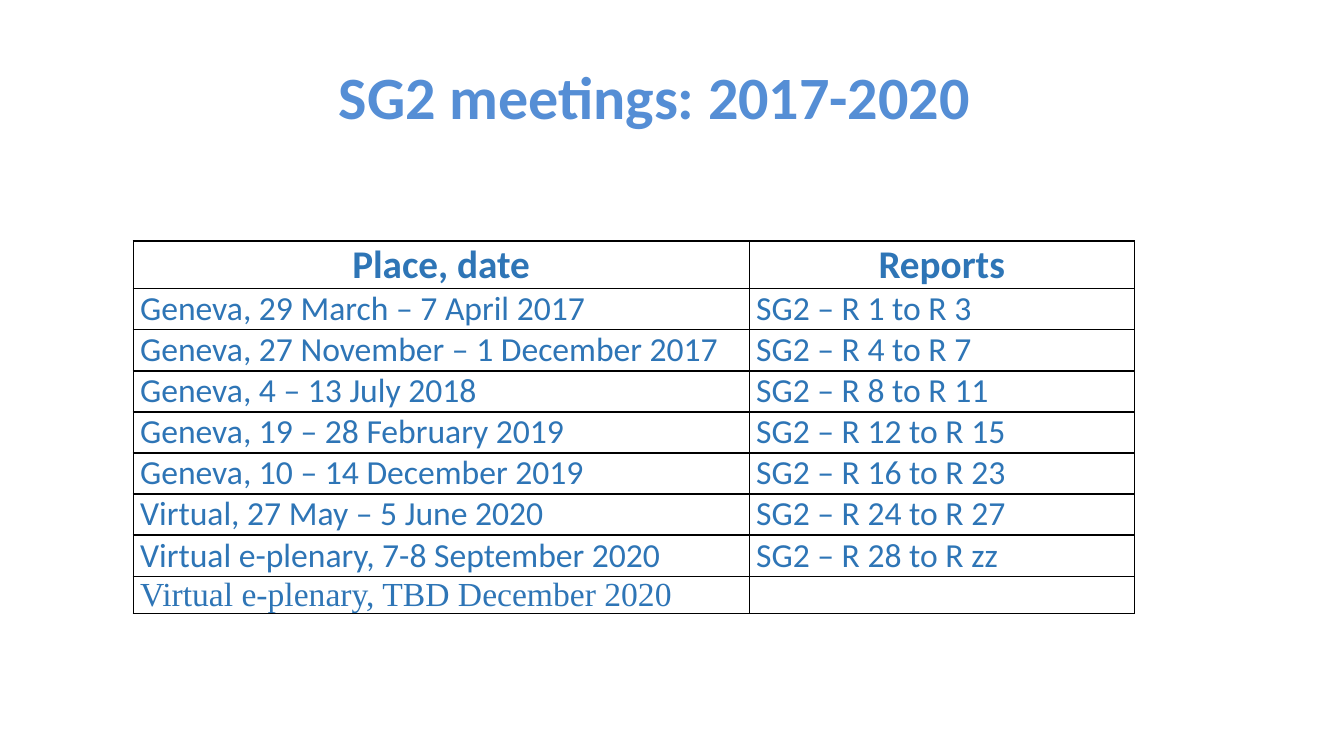
from dataclasses import dataclass

from lxml.etree import SubElement
from pptx import Presentation
from pptx.dml.color import RGBColor
from pptx.enum.text import MSO_ANCHOR as Anchor, MSO_AUTO_SIZE as AutoSize, PP_ALIGN as Align
from pptx.oxml.ns import qn
from pptx.slide import Slide
from pptx.table import _Cell as Cell
from pptx.text.text import _Paragraph as Paragraph
from pptx.util import Inches, Pt

TITLE_BLUE = RGBColor(0x55, 0x8E, 0xD5)
TABLE_BLUE = RGBColor(0x2E, 0x75, 0xB6)
BLACK = RGBColor(0, 0, 0)


@dataclass(frozen=True)
class TextStyle:
    size: float
    color: RGBColor
    bold: bool = False
    font: str = "Calibri"
    align: Align = Align.LEFT
    after: float = 0


@dataclass(frozen=True)
class Meeting:
    place_date: str
    reports: str
    style: TextStyle
    height: float = 0.4


TITLE = TextStyle(42.9, TITLE_BLUE, bold=True, align=Align.CENTER)
HEADER = TextStyle(28, TABLE_BLUE, bold=True, align=Align.CENTER, after=4)
BODY = TextStyle(24, TABLE_BLUE, after=2)
PLANNED = TextStyle(24, TABLE_BLUE, font="Times New Roman", after=2)

MEETINGS = [
    Meeting("Place, date", "Reports", HEADER, 0.47),
    Meeting("Geneva, 29 March – 7 April 2017", "SG2 – R 1 to R 3", BODY),
    Meeting("Geneva, 27 November – 1 December 2017", "SG2 – R 4 to R 7", BODY),
    Meeting("Geneva, 4 – 13 July 2018", "SG2 – R 8 to R 11", BODY),
    Meeting("Geneva, 19 – 28 February 2019", "SG2 – R 12 to R 15", BODY),
    Meeting("Geneva, 10 – 14 December 2019", "SG2 – R 16 to R 23", BODY),
    Meeting("Virtual, 27 May – 5 June 2020", "SG2 – R 24 to R 27", BODY),
    Meeting("Virtual e-plenary, 7-8 September 2020", "SG2 – R 28 to R zz", BODY),
    Meeting("Virtual e-plenary, TBD December 2020", "", PLANNED, 0.37),
]
COLUMN_WIDTHS = [6.11, 3.82]


def write(paragraph: Paragraph, text: str, style: TextStyle) -> None:
    paragraph.alignment = style.align
    paragraph.space_before = Pt(0)
    paragraph.space_after = Pt(style.after)
    font = paragraph.font
    if text:
        font = paragraph.add_run().font
        paragraph.runs[0].text = text
    formats = {"size": Pt(style.size), "bold": style.bold, "name": style.font}
    for attribute, value in formats.items():
        setattr(font, attribute, value)
    font.color.rgb = style.color


def add_borders(cell: Cell) -> None:
    properties = cell._tc.get_or_add_tcPr()
    for side in ("a:lnL", "a:lnR", "a:lnT", "a:lnB"):
        border = SubElement(properties, qn(side), w=str(Pt(1)))
        fill = SubElement(border, qn("a:solidFill"))
        SubElement(fill, qn("a:srgbClr"), val=str(BLACK))


def fill_cell(cell: Cell, text: str, style: TextStyle) -> None:
    formats = {
        "margin_left": Inches(0.07),
        "margin_right": Inches(0.07),
        "margin_top": 0,
        "margin_bottom": 0,
        "vertical_anchor": Anchor.MIDDLE,
    }
    for attribute, value in formats.items():
        setattr(cell, attribute, value)
    add_borders(cell)
    cell.fill.background()
    write(cell.text_frame.paragraphs[0], text, style)


def add_title(slide: Slide, text: str) -> None:
    title = slide.shapes.title
    box = {"left": 1.32, "top": 0.32, "width": 10.34, "height": 1.25}
    for attribute, value in box.items():
        setattr(title, attribute, Inches(value))
    frame = title.text_frame
    formats = {"auto_size": AutoSize.NONE, "vertical_anchor": Anchor.MIDDLE, "word_wrap": True}
    for attribute, value in formats.items():
        setattr(frame, attribute, value)
    write(frame.paragraphs[0], text, TITLE)


def add_meetings(slide: Slide) -> None:
    height = sum(meeting.height for meeting in MEETINGS)
    table = slide.shapes.add_table(
        len(MEETINGS), len(COLUMN_WIDTHS),
        Inches(1.32), Inches(2.39), Inches(sum(COLUMN_WIDTHS)), Inches(height),
    ).table
    table.first_row = False
    table.horz_banding = False
    for column, width in zip(table.columns, COLUMN_WIDTHS):
        column.width = Inches(width)
    for row, meeting in zip(table.rows, MEETINGS):
        row.height = Inches(meeting.height)
        for cell, text in zip(row.cells, (meeting.place_date, meeting.reports)):
            fill_cell(cell, text, meeting.style)


def main() -> None:
    presentation = Presentation()
    presentation.slide_width = Inches(13.33)
    presentation.slide_height = Inches(7.5)
    slide = presentation.slides.add_slide(presentation.slide_layouts.get_by_name("Title Only"))
    add_title(slide, "SG2 meetings: 2017-2020")
    add_meetings(slide)
    presentation.save("out.pptx")


if __name__ == "__main__":
    main()
